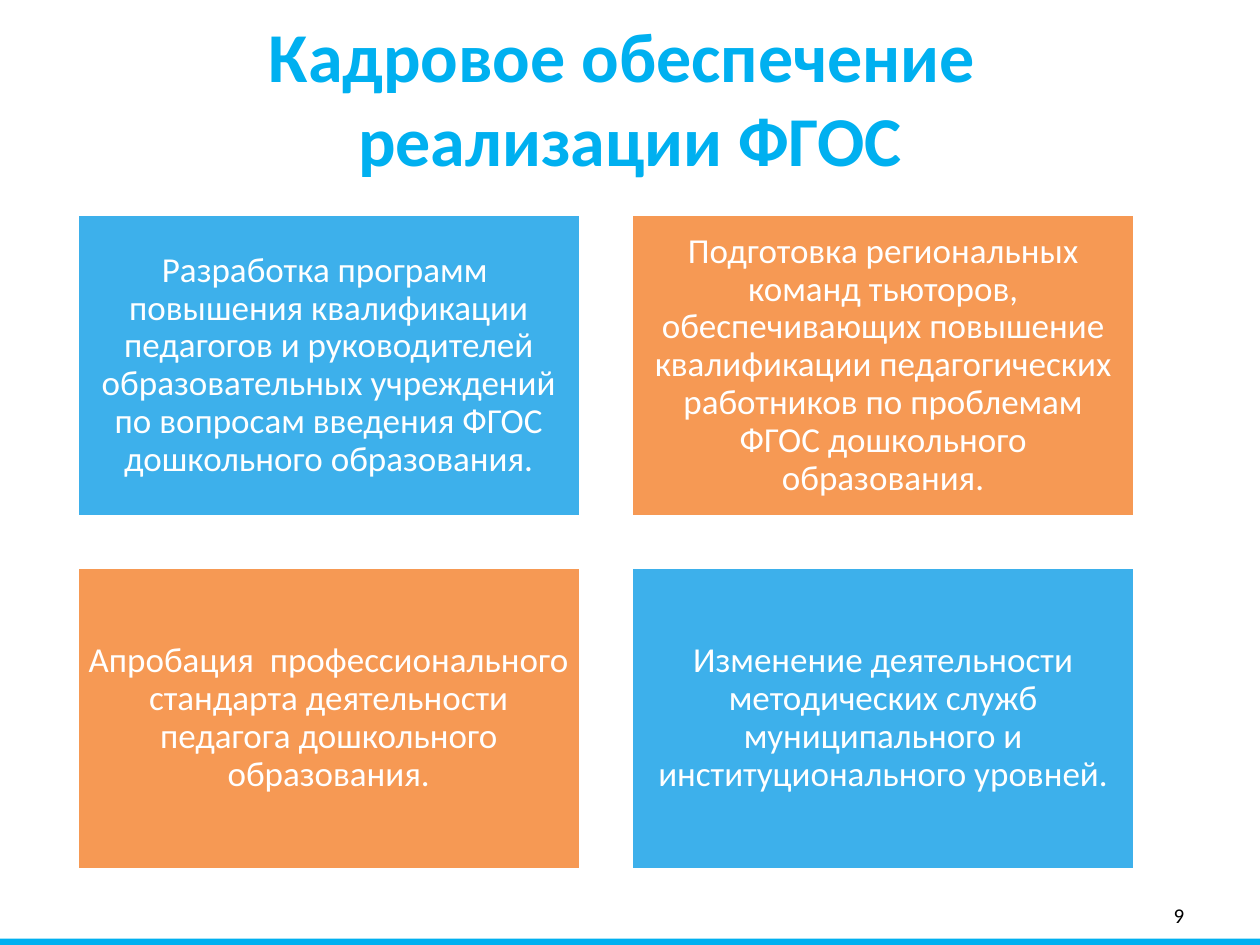
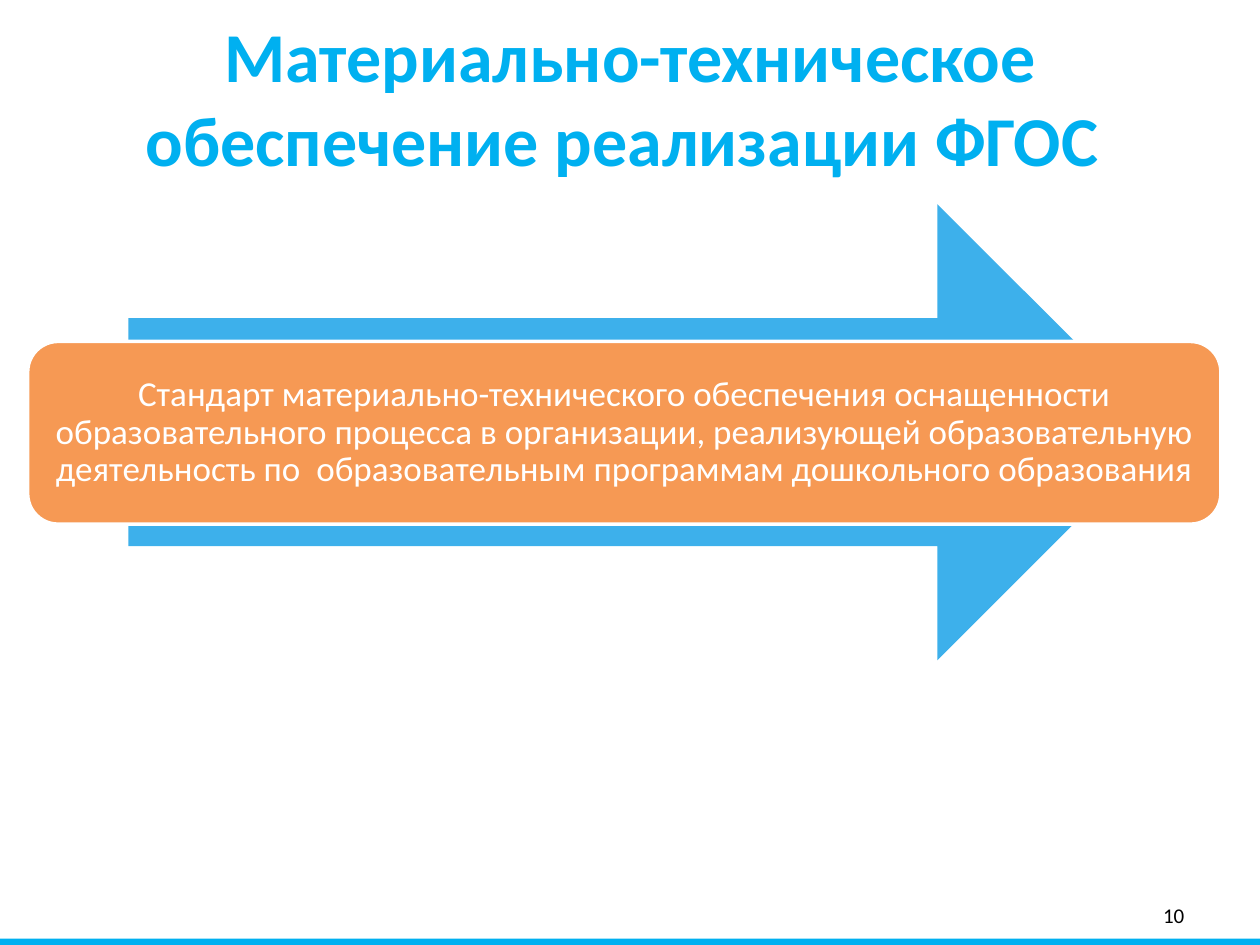
from copy import deepcopy
from dataclasses import dataclass

from lxml.etree import SubElement
from pptx import Presentation
from pptx.dml.color import RGBColor
from pptx.enum.shapes import MSO_SHAPE as Preset, PP_PLACEHOLDER as Role
from pptx.enum.text import MSO_ANCHOR as Anchor, MSO_AUTO_SIZE as AutoSize, PP_ALIGN as Align
from pptx.oxml.ns import qn
from pptx.presentation import Presentation as Deck
from pptx.shapes.autoshape import Shape
from pptx.slide import Slide
from pptx.text.text import Font
from pptx.util import Inches, Pt

WIDTH, HEIGHT = Inches(10), Inches(7.5)
COLUMNS, ROWS = 100, 75
FIRST_NUMBER = 9


@dataclass(frozen=True)
class Theme:
    accent: RGBColor = RGBColor.from_string("00B0F0")
    blue: RGBColor = RGBColor.from_string("3DB0EB")
    orange: RGBColor = RGBColor.from_string("F69954")
    white: RGBColor = RGBColor.from_string("FFFFFF")
    black: RGBColor = RGBColor.from_string("000000")
    face: str = "Calibri"
    title_size: int = 40
    body_size: int = 20
    number_size: int = 12


@dataclass(frozen=True)
class Area:
    column: float
    row: float
    columns: float
    rows: float

    def place(self) -> tuple[int, int, int, int]:
        x, y = WIDTH / COLUMNS, HEIGHT / ROWS
        return (round(self.column * x), round(self.row * y),
                round(self.columns * x), round(self.rows * y))


@dataclass(frozen=True)
class Panel:
    area: Area
    fill: RGBColor
    text: str = ""
    preset: Preset = Preset.RECTANGLE
    outlined: bool = True


THEME = Theme()
TITLE = Area(5, 0.5, 90, 12.5)
NUMBER = Area(71.7, 70.6, 23.3, 4)
BAND = Panel(Area(0, 74.5, 100, 0.5), THEME.accent, outlined=False)
TILE = Area(6.1, 17, 40, 24)
TILE_GAP = 4

STAFF_MEASURES = (
    "Разработка программ  повышения квалификации педагогов и руководителей "
    "образовательных учреждений по вопросам введения ФГОС дошкольного образования.",
    "Подготовка региональных команд тьюторов, обеспечивающих повышение квалификации "
    "педагогических работников по проблемам ФГОС дошкольного образования.",
    "Апробация  профессионального стандарта деятельности педагога дошкольного образования.",
    "Изменение деятельности методических служб муниципального и институционального уровней.",
)
EQUIPMENT_STANDARD = (
    "Стандарт материально-технического обеспечения оснащенности образовательного процесса "
    "в организации, реализующей образовательную деятельность по  образовательным программам "
    "дошкольного образования"
)


def style_font(font: Font, size: int, color: RGBColor, bold: bool = False) -> None:
    font.name, font.size, font.bold = THEME.face, Pt(size), bold
    font.color.rgb = color


def move(shape: Shape, area: Area) -> None:
    shape.left, shape.top, shape.width, shape.height = area.place()


def draw_panel(slide: Slide, panel: Panel) -> Shape:
    shape = slide.shapes.add_shape(panel.preset, *panel.area.place())
    shape.shadow.inherit = False
    shape.fill.solid()
    shape.fill.fore_color.rgb = panel.fill
    if panel.outlined:
        shape.line.color.rgb = THEME.white
        shape.line.width = Pt(2)
    else:
        shape.line.fill.background()
    if panel.text:
        frame = shape.text_frame
        frame.word_wrap = True
        frame.vertical_anchor = Anchor.MIDDLE
        frame.margin_left = frame.margin_right = Inches(0.08)
        frame.margin_top = frame.margin_bottom = Inches(0.08)
        frame.text = panel.text
        paragraph = frame.paragraphs[0]
        paragraph.alignment = Align.CENTER
        paragraph.line_spacing = 0.9
        paragraph.space_after = Pt(7)
        style_font(paragraph.font, THEME.body_size, THEME.white)
    return shape


def add_number(slide: Slide, number: int) -> None:
    holder = next(p for p in slide.slide_layout.placeholders
                  if p.placeholder_format.type == Role.SLIDE_NUMBER)
    slide.shapes.element.append(deepcopy(holder.element))
    footer = next(p for p in slide.placeholders
                  if p.placeholder_format.type == Role.SLIDE_NUMBER)
    move(footer, NUMBER)
    frame = footer.text_frame
    frame.vertical_anchor = Anchor.MIDDLE
    frame.text = str(number)
    paragraph = frame.paragraphs[0]
    paragraph.alignment = Align.RIGHT
    run = paragraph.runs[0]
    style_font(run.font, THEME.number_size, THEME.black)
    field = SubElement(paragraph.runs[0]._r.getparent(), qn("a:fld"),
                       id="{B6F15528-21DE-4FAA-801E-634DDDAF4B2B}", type="slidenum")
    paragraph_xml = field.getparent()
    run_xml = paragraph_xml.find(qn("a:r"))
    field.extend(list(run_xml))
    paragraph_xml.remove(run_xml)


def add_slide(deck: Deck, title: str) -> Slide:
    slide = deck.slides.add_slide(deck.slide_layouts.get_by_name("Title Only"))
    heading = slide.shapes.title
    move(heading, TITLE)
    frame = heading.text_frame
    frame.auto_size = AutoSize.NONE
    frame.vertical_anchor = Anchor.TOP
    frame.text = title
    frame.paragraphs[0].alignment = Align.CENTER
    style_font(frame.paragraphs[0].font, THEME.title_size, THEME.accent, bold=True)
    add_number(slide, FIRST_NUMBER + len(deck.slides) - 1)
    return slide


def add_band(deck: Deck, slide: Slide) -> None:
    band = draw_panel(slide, BAND).element
    band.nvSpPr.cNvPr.set("id", "100")
    deck.slide_master.shapes.element.append(band)


def build_staff(deck: Deck) -> Slide:
    slide = add_slide(deck, "Кадровое обеспечение \vреализации ФГОС")
    for index, measure in enumerate(STAFF_MEASURES):
        row, column = divmod(index, 2)
        area = Area(TILE.column + column * (TILE.columns + TILE_GAP),
                    TILE.row + row * (TILE.rows + TILE_GAP), TILE.columns, TILE.rows)
        fill = THEME.blue if row == column else THEME.orange
        draw_panel(slide, Panel(area, fill, measure))
    return slide


def build_equipment(deck: Deck) -> None:
    slide = add_slide(deck, "Материально-техническое обеспечение реализации ФГОС ")
    draw_panel(slide, Panel(Area(10.2, 16.2, 82.3, 36.2), THEME.blue,
                            preset=Preset.RIGHT_ARROW, outlined=False))
    draw_panel(slide, Panel(Area(2.2, 27.1, 94.7, 14.5), THEME.orange, EQUIPMENT_STANDARD,
                            Preset.ROUNDED_RECTANGLE))


def main() -> None:
    deck = Presentation()
    deck.slide_width, deck.slide_height = WIDTH, HEIGHT
    deck.element.set("firstSlideNum", str(FIRST_NUMBER))
    add_band(deck, build_staff(deck))
    build_equipment(deck)
    deck.save("out.pptx")


if __name__ == "__main__":
    main()
